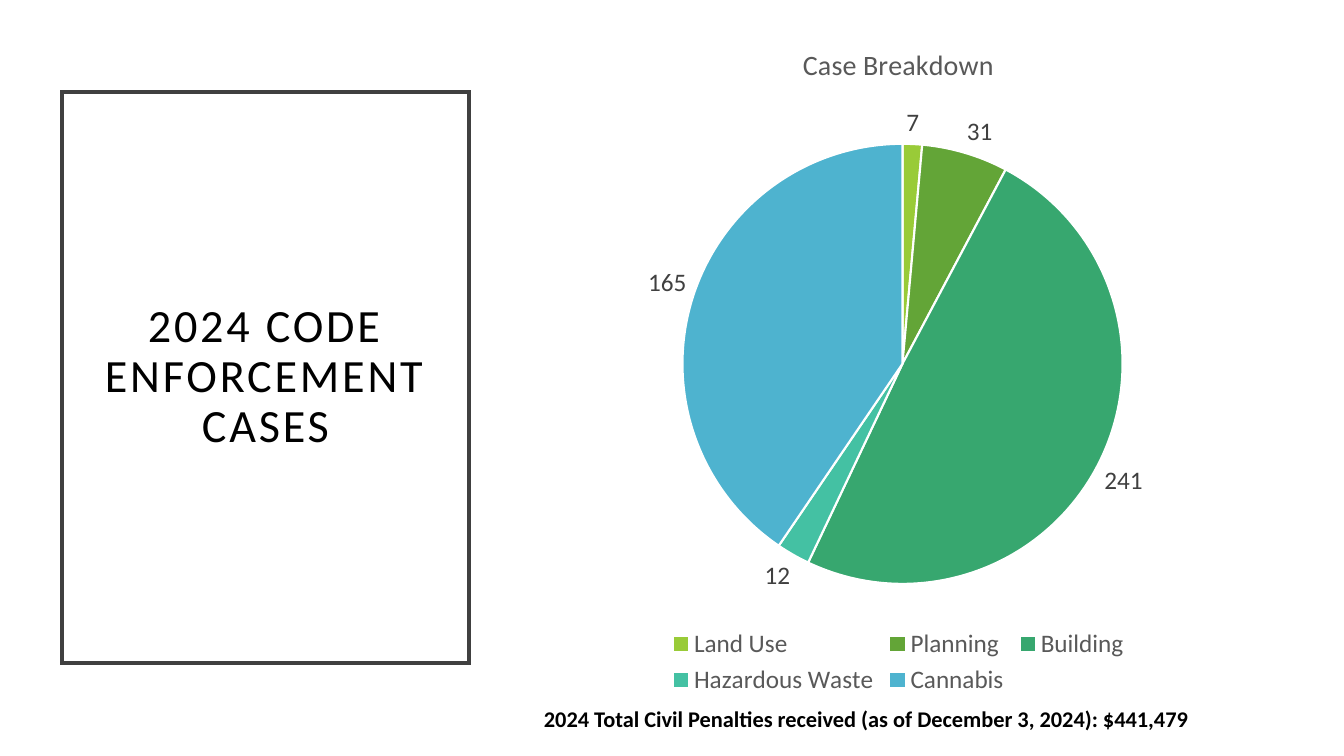
from lxml.etree import SubElement
from pptx import Presentation
from pptx.chart.data import CategoryChartData
from pptx.dml.color import RGBColor
from pptx.enum.chart import XL_CHART_TYPE, XL_LABEL_POSITION as LabelPos, XL_LEGEND_POSITION as LegendPos
from pptx.enum.shapes import MSO_SHAPE
from pptx.enum.text import MSO_ANCHOR, MSO_AUTO_SIZE, PP_ALIGN
from pptx.oxml.ns import qn
from pptx.util import Emu, Pt

PX_PER_INCH = 100.8
FONT = "Calibri"
CASES = [
    ("Land Use", 7, "99CB38"),
    ("Planning", 31, "63A537"),
    ("Building", 241, "37A76F"),
    ("Hazardous Waste", 12, "44C1A3"),
    ("Cannabis", 198, "4EB3CF"),
]
CUSTOM_LABELS = {4: "165"}
PIE_LAYOUT = {"x": 0.235, "y": 0.18, "w": 0.54, "h": 0.65}


def px(length):
    return Emu(round(length * 914400 / PX_PER_INCH))


def color(hex_code):
    return RGBColor.from_string(hex_code)


def set_attributes(target, **values):
    for name, value in values.items():
        setattr(target, name, value)


def style_font(font, size, hex_code, bold=False):
    set_attributes(font, name=FONT, size=Pt(size), bold=bold)
    font.color.rgb = color(hex_code)


def add_title_box(page, place, text):
    box = page.shapes.add_shape(MSO_SHAPE.RECTANGLE, *map(px, place))
    box.shadow.inherit = False
    box.fill.solid()
    box.fill.fore_color.rgb = color("FFFFFF")
    box.line.color.rgb = color("404040")
    box.line.width = Pt(2.5)
    SubElement(box.line._get_or_add_ln(), qn("a:miter")).set("lim", "800000")
    frame = box.text_frame
    margins = {f"margin_{side}": px(20) for side in ("left", "top", "right", "bottom")}
    set_attributes(frame, word_wrap=True, vertical_anchor=MSO_ANCHOR.MIDDLE, **margins)
    para = frame.paragraphs[0]
    set_attributes(para, alignment=PP_ALIGN.CENTER, line_spacing=0.9)
    span = para.add_run()
    span.text = text
    style_font(span.font, 33, "000000")
    span.font._element.set("spc", "200")


def add_note(page, place, text):
    frame = page.shapes.add_textbox(*map(px, place)).text_frame
    set_attributes(frame, word_wrap=True, auto_size=MSO_AUTO_SIZE.SHAPE_TO_FIT_TEXT)
    span = frame.paragraphs[0].add_run()
    span.text = text
    style_font(span.font, 16, "000000", bold=True)


def place_plot(chart, fractions):
    """Fix the plot area at fractions of the chart's size."""
    plot_area = chart._chartSpace.chart.plotArea
    layout = plot_area.find(qn("c:layout"))
    if layout is None:
        layout = SubElement(plot_area, qn("c:layout"))
        plot_area.insert(0, layout)
    manual = SubElement(layout, qn("c:manualLayout"))
    settings = {"layoutTarget": "inner", "xMode": "edge", "yMode": "edge", **fractions}
    for name, value in settings.items():
        SubElement(manual, qn(f"c:{name}")).set("val", str(value))


def label_slices(series):
    labels = series.data_labels
    set_attributes(labels, show_value=True, show_percentage=False, position=LabelPos.OUTSIDE_END)
    style_font(labels.font, 18, "404040")
    for index, text in CUSTOM_LABELS.items():
        label = series.points[index].data_label
        span = label.text_frame.paragraphs[0].add_run()
        span.text = text
        style_font(span.font, 18, "404040")
        label.position = LabelPos.OUTSIDE_END


def add_pie(page, place, title):
    names, values, fills = zip(*CASES)
    cases = CategoryChartData()
    cases.categories = names
    cases.add_series("Series 1", values)
    chart = page.shapes.add_chart(XL_CHART_TYPE.PIE, *map(px, place), cases).chart
    style_font(chart.font, 10, "000000")

    chart.has_title = True
    span = chart.chart_title.text_frame.paragraphs[0].add_run()
    span.text = title
    style_font(span.font, 20, "595959")

    chart.has_legend = True
    set_attributes(chart.legend, position=LegendPos.BOTTOM, include_in_layout=False)
    style_font(chart.legend.font, 18, "595959")

    plot = chart.plots[0]
    plot.vary_by_categories = True
    series = plot.series[0]
    for index, fill in enumerate(fills):
        style = series.points[index].format
        style.fill.solid()
        style.fill.fore_color.rgb = color(fill)
        style.line.color.rgb = color("FFFFFF")
        style.line.width = Pt(1.5)
    label_slices(series)
    place_plot(chart, PIE_LAYOUT)


def main():
    deck = Presentation()
    set_attributes(deck, slide_width=px(1344), slide_height=px(756))
    page = deck.slides.add_slide(deck.slide_layouts[6])
    add_title_box(page, (62, 92, 407, 571), "2024 CODE ENFORCEMENT CASES")
    add_pie(page, (491, 21, 815, 679), "Case Breakdown")
    add_note(page, (534, 700, 772, 37),
             "2024 Total Civil Penalties received (as of December 3, 2024): $441,479")
    deck.save("out.pptx")


if __name__ == "__main__":
    main()
